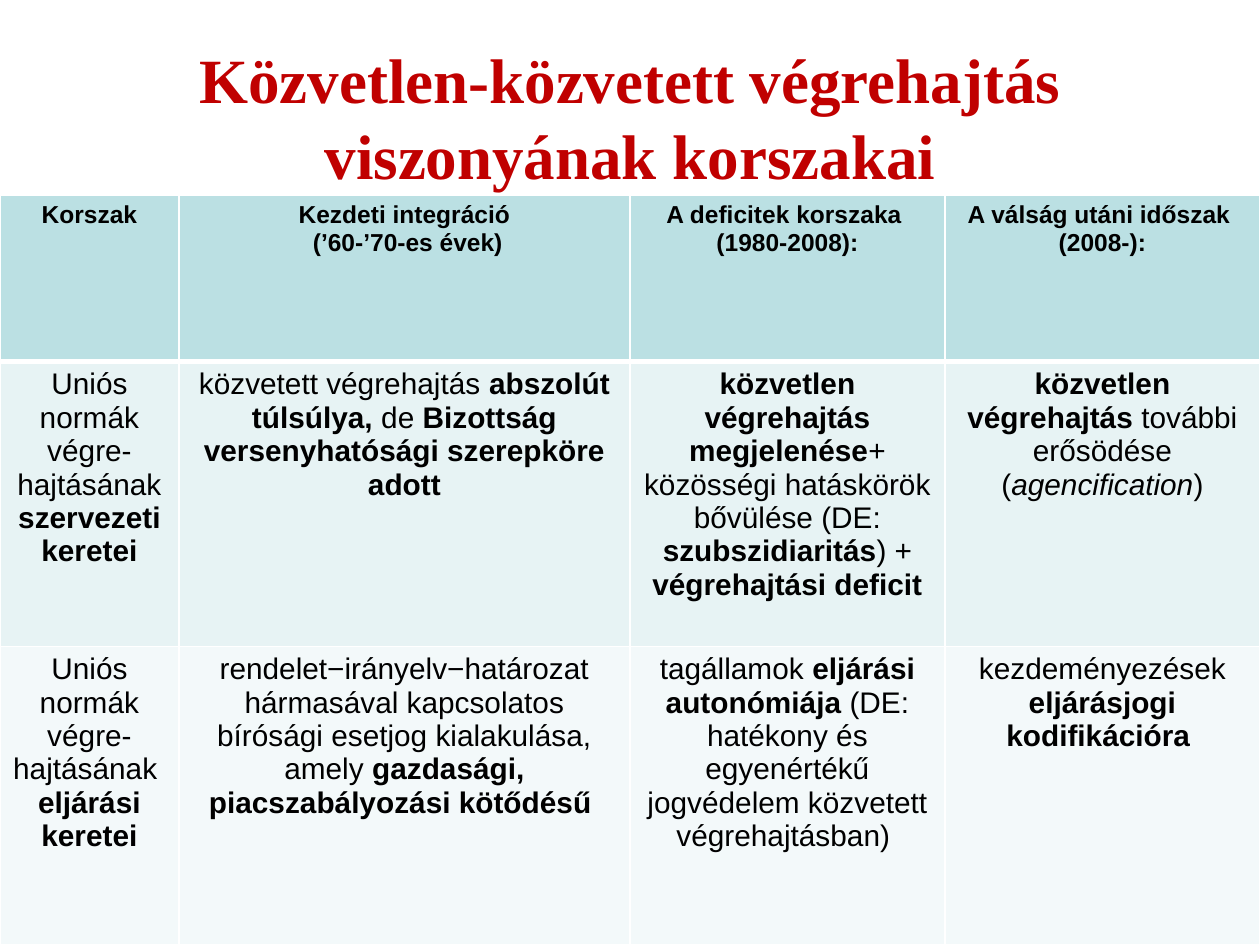
from lxml import etree
from pptx import Presentation
from pptx.dml.color import RGBColor
from pptx.enum.text import MSO_ANCHOR, PP_ALIGN
from pptx.oxml.ns import qn
from pptx.util import Inches, Pt

COLORS = {"title": "C00000", "text": "000000", "border": "FFFFFF"}
ROW_FILLS = ["BBE0E3", "E7F3F4", "F3F9FA"]
ROW_SIZES = [14, 17, 17]
COL_WIDTHS = [1.42, 3.58, 2.5, 2.5]
ROW_HEIGHTS = [1.32, 2.26, 2.37]
TITLE = "Közvetlen-közvetett végrehajtás viszonyának korszakai"
ROWS = [
    [
        ["*Korszak"],
        ["*Kezdeti integráció", "* (’60-’70-es évek)"],
        ["*A deficitek korszaka ", "*(1980-2008):"],
        ["*A válság utáni időszak ", "*(2008-):"],
    ],
    [
        ["Uniós normák végre-hajtásának *szervezeti keretei"],
        ["közvetett végrehajtás *abszolút túlsúlya, *de* Bizottság versenyhatósági szerepköre adott"],
        ["*közvetlen végrehajtás megjelenése*+ közösségi hatáskörök bővülése "
         "(DE: *szubszidiaritás*) + *végrehajtási deficit"],
        ["*közvetlen végrehajtás* további erősödése (_agencification_)"],
    ],
    [
        ["Uniós normák végre-hajtásának ", "*eljárási keretei"],
        ["rendelet−irányelv−határozat hármasával kapcsolatos bírósági esetjog kialakulása, "
         "amely *gazdasági, piacszabályozási kötődésű "],
        ["tagállamok *eljárási autonómiája* (DE: hatékony és egyenértékű "
         "jogvédelem közvetett végrehajtásban) "],
        ["kezdeményezések *eljárásjogi kodifikációra "],
    ],
]


def write(tf, paragraphs, size, font="Arial", color="text"):
    for i, text in enumerate(paragraphs):
        p = tf.paragraphs[0] if i == 0 else tf.add_paragraph()
        p.alignment = PP_ALIGN.CENTER
        for j, part in enumerate(text.split("*")):
            for k, piece in enumerate(part.split("_")):
                if not piece:
                    continue
                r = p.add_run()
                r.text = piece
                r.font.size = Pt(size)
                r.font.name = font
                r.font.bold = j % 2 == 1
                r.font.italic = k % 2 == 1
                r.font.color.rgb = RGBColor.from_string(COLORS[color])


def set_borders(cell, widths):
    tc_pr = cell._tc.get_or_add_tcPr()
    for i, (side, width) in enumerate(widths.items()):
        ln = etree.Element(qn("a:ln" + side), w=str(Pt(width)))
        fill = etree.SubElement(ln, qn("a:solidFill"))
        etree.SubElement(fill, qn("a:srgbClr"), val=COLORS["border"])
        tc_pr.insert(i, ln)


prs = Presentation()
prs.slide_width, prs.slide_height = Inches(10), Inches(7.5)
s = prs.slides.add_slide(prs.slide_layouts[5])

title = s.shapes.title
title.left, title.top = Inches(0.5), Inches(0.3)
title.width, title.height = Inches(9), Inches(1.25)
title.text_frame.vertical_anchor = MSO_ANCHOR.MIDDLE
write(title.text_frame, ["*" + TITLE], 36, font="Times New Roman", color="title")

table = s.shapes.add_table(
    len(ROWS), len(COL_WIDTHS), Inches(0), Inches(1.55),
    Inches(sum(COL_WIDTHS)), Inches(sum(ROW_HEIGHTS)),
).table
for column, width in zip(table.columns, COL_WIDTHS):
    column.width = Inches(width)
for row, height in zip(table.rows, ROW_HEIGHTS):
    row.height = Inches(height)

for i, row in enumerate(ROWS):
    for j, paragraphs in enumerate(row):
        cell = table.cell(i, j)
        cell.fill.solid()
        cell.fill.fore_color.rgb = RGBColor.from_string(ROW_FILLS[i])
        set_borders(cell, {"L": 1, "R": 1, "T": 3 if i == 1 else 1, "B": 3 if i == 0 else 1})
        write(cell.text_frame, paragraphs, ROW_SIZES[i])

prs.save("out.pptx")
